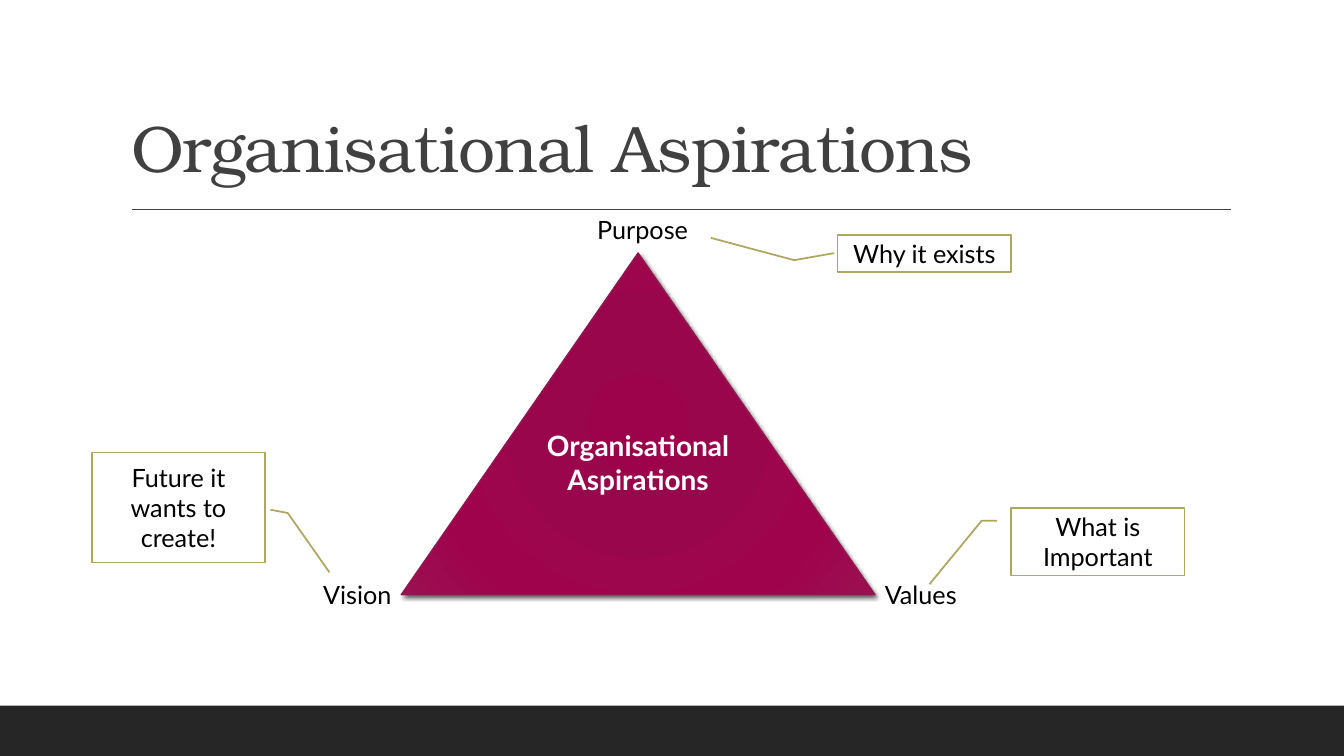
from dataclasses import dataclass

import pptx
import pptx.dml.color
import pptx.enum.shapes
import pptx.enum.text
import pptx.oxml
import pptx.oxml.ns
import pptx.util

Pt = pptx.util.Pt
Align = pptx.enum.text.PP_ALIGN
Anchor = pptx.enum.text.MSO_ANCHOR
AutoSize = pptx.enum.text.MSO_AUTO_SIZE
Preset = pptx.enum.shapes.MSO_SHAPE

SLIDE_WIDTH, SLIDE_HEIGHT = 960, 540
FOOTER_HEIGHT = 36
CALLOUT_WIDTH = 124
LABEL_HEIGHT = 29
BODY_FONT, TITLE_FONT = "Lato", "TeX Gyre Bonum"
DARK_GREY, BLACK, WHITE, OLIVE, PLUM = "404040", "000000", "FFFFFF", "AFA65F", "941651"
TRIANGLE_STOPS = ((0, "9C034A"), (34, "9A064B"), (70, "9F034C"), (100, "9A1051"))


@dataclass(frozen=True)
class Corner:
    """A corner of the triangle: its label and the callout explaining it."""
    name: str
    left: float
    top: float
    width: float
    meaning: str
    callout_left: float
    callout_top: float
    callout_height: float
    leader: tuple[float, ...]


CORNERS = (
    Corner("Purpose", 379.5, 149.8, 159, "Why it exists", 598.3, 167.8, 26.6,
           (0.49, -0.02, 0.68, -0.25, 0.08, -0.73)),
    Corner("Values", 608.4, 410.4, 98.6, "What is Important", 722.2, 362.9, 48.2,
           (0.19, -0.08, 0.19, -0.17, 1.13, -0.47)),
    Corner("Vision", 201.6, 410.4, 107.3, "Future it wants to create!", 65.5, 323.3, 78.5,
           (0.52, 1.03, 0.55, 1.13, 1.09, 1.37)),
)


def colour(hex_code: str) -> pptx.dml.color.RGBColor:
    return pptx.dml.color.RGBColor.from_string(hex_code)


def box(left: float, top: float, width: float, height: float) -> tuple:
    return Pt(left), Pt(top), Pt(width), Pt(height)


def drawing_xml(markup: str):
    """Parse markup whose root element gets the DrawingML namespace."""
    tag, rest = markup.split(">", 1)
    return pptx.oxml.parse_xml(f"{tag} {pptx.oxml.ns.nsdecls('a')}>{rest}")


def write(holder, text: str, size: float, hex_code: str, font: str = BODY_FONT,
          bold: bool = False, align=Align.CENTER, anchor=Anchor.TOP):
    frame = holder.text_frame
    frame.word_wrap = True
    frame.vertical_anchor = anchor
    paragraph = frame.paragraphs[0]
    paragraph.alignment = align
    run = paragraph.add_run()
    run.text = text
    run.font.name = font
    run.font.size = Pt(size)
    run.font.bold = bold
    run.font.color.rgb = colour(hex_code)
    return run


def add_plain_shape(slide, preset, bounds: tuple, fill: str):
    shape = slide.shapes.add_shape(preset, *bounds)
    shape.shadow.inherit = False
    shape.fill.solid()
    shape.fill.fore_color.rgb = colour(fill)
    shape.line.fill.background()
    return shape


def outline(shape, hex_code: str, width: float) -> None:
    shape.line.color.rgb = colour(hex_code)
    shape.line.width = Pt(width)


def add_footer_band(slide) -> None:
    top = SLIDE_HEIGHT - FOOTER_HEIGHT
    add_plain_shape(slide, Preset.RECTANGLE, box(0, top, SLIDE_WIDTH, FOOTER_HEIGHT), "262626")


def add_title_rule(slide) -> None:
    rule = slide.shapes.add_connector(
        pptx.enum.shapes.MSO_CONNECTOR.STRAIGHT, Pt(94.3), Pt(149.6), Pt(879), Pt(149.6))
    outline(rule, DARK_GREY, 1)
    rule._element.spPr.append(drawing_xml("<a:effectLst></a:effectLst>"))


def fill_title(slide) -> None:
    title = slide.shapes.title
    title.left, title.top, title.width, title.height = box(86.4, 22.3, 792, 114.5)
    run = write(title, "Organisational Aspirations", 47, DARK_GREY, TITLE_FONT,
                align=Align.LEFT, anchor=Anchor.BOTTOM)
    title.text_frame.auto_size = AutoSize.NONE
    title.text_frame.paragraphs[0].line_spacing = 0.9
    run._r.get_or_add_rPr().set("spc", "-50")


def add_triangle(slide) -> None:
    triangle = add_plain_shape(slide, Preset.ISOSCELES_TRIANGLE,
                               box(286.6, 180.7, 338.4, 244.1), PLUM)
    outline(triangle, PLUM, 1)
    write(triangle, "Organisational Aspirations", 20, WHITE, bold=True)

    stops = "".join(f'<a:gs pos="{position * 1000}"><a:srgbClr val="{hex_code}"/></a:gs>'
                    for position, hex_code in TRIANGLE_STOPS)
    gradient = drawing_xml(
        f'<a:gradFill rotWithShape="1"><a:gsLst>{stops}</a:gsLst><a:path path="circle">'
        '<a:fillToRect l="100000" t="100000" r="100000" b="100000"/></a:path></a:gradFill>')
    properties = triangle._element.spPr
    properties.replace(properties.find(pptx.oxml.ns.qn("a:solidFill")), gradient)
    properties.find(pptx.oxml.ns.qn("a:effectLst")).append(drawing_xml(
        f'<a:outerShdw blurRad="{Pt(3)}" dist="{Pt(2)}" dir="2700000" rotWithShape="0">'
        f'<a:srgbClr val="{BLACK}"><a:alpha val="60000"/></a:srgbClr></a:outerShdw>'))


def add_label(slide, corner: Corner) -> None:
    label = slide.shapes.add_textbox(*box(corner.left, corner.top, corner.width, LABEL_HEIGHT))
    write(label, corner.name, 18, BLACK)
    label.text_frame.auto_size = AutoSize.SHAPE_TO_FIT_TEXT


def add_callout(slide, corner: Corner) -> None:
    bounds = box(corner.callout_left, corner.callout_top, CALLOUT_WIDTH, corner.callout_height)
    callout = add_plain_shape(slide, Preset.LINE_CALLOUT_2, bounds, WHITE)
    outline(callout, OLIVE, 1.25)
    for index, value in enumerate(corner.leader):
        callout.adjustments[index] = value
    write(callout, corner.meaning, 18, BLACK, anchor=Anchor.MIDDLE)


def main() -> None:
    deck = pptx.Presentation()
    deck.slide_width, deck.slide_height = Pt(SLIDE_WIDTH), Pt(SLIDE_HEIGHT)
    slide = deck.slides.add_slide(deck.slide_layouts.get_by_name("Title Only"))
    add_footer_band(slide)
    add_title_rule(slide)
    fill_title(slide)
    add_triangle(slide)
    for corner in CORNERS:
        add_label(slide, corner)
        add_callout(slide, corner)
    deck.save("out.pptx")


if __name__ == "__main__":
    main()
